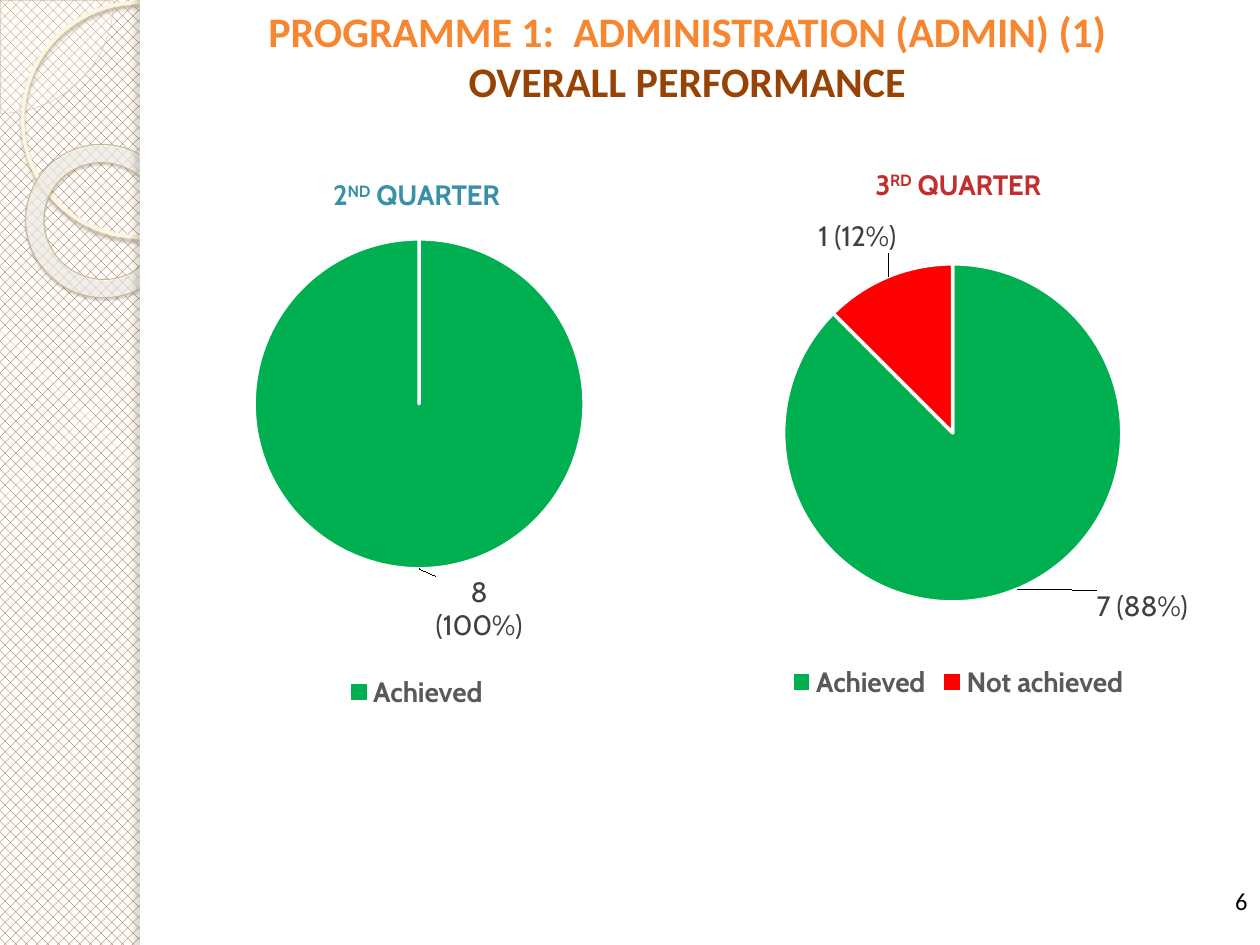
from pptx import Presentation
from pptx.chart.data import CategoryChartData
from pptx.dml.color import RGBColor
from pptx.enum.chart import XL_CHART_TYPE as ChartType, XL_LABEL_POSITION as LabelPosition
from pptx.enum.chart import XL_LEGEND_POSITION as LegendPosition
from pptx.enum.dml import MSO_PATTERN as Pattern
from pptx.enum.shapes import MSO_SHAPE as Shape
from pptx.enum.text import MSO_ANCHOR as Anchor, PP_ALIGN as Align
from pptx.oxml import parse_xml
from pptx.oxml.ns import nsdecls, qn
from pptx.util import Inches, Pt

GREEN, RED = "00B050", "FF0000"
RING_STOPS = [(0, "FFFCF6", 70), (70, "FFFEFB", 55), (100, "F0D28E", 60)]


def color(value):
    return RGBColor.from_string(value)


def style_font(font, size, value, bold=False, name="Cabin"):
    font.size = Pt(size)
    font.name = name
    font.bold = bold
    font.color.rgb = color(value)


def alpha_color(value, alpha):
    return f'<a:srgbClr val="{value}"><a:alpha val="{alpha * 1000}"/></a:srgbClr>'


def add_shape(slide, kind, place, fill=None, line=None, adjustments=()):
    shape = slide.shapes.add_shape(kind, *map(Inches, place))
    shape.shadow.inherit = False
    for index, value in enumerate(adjustments):
        shape.adjustments[index] = value
    if fill:
        shape.fill.solid()
        shape.fill.fore_color.rgb = color(fill)
    else:
        shape.fill.background()
    if line:
        shape.line.color.rgb = color(line[0])
        shape.line.width = Pt(line[1])
    else:
        shape.line.fill.background()
    return shape


def set_opacity(shape, alpha):
    fill = shape._element.spPr.find(qn("a:solidFill"))
    fill[0].append(parse_xml(f'<a:alpha {nsdecls("a")} val="{alpha * 1000}"/>'))


def add_shadow(shape, value, alpha, blur, distance, angle):
    effects = shape._element.spPr.find(qn("a:effectLst"))
    effects.append(parse_xml(
        f'<a:outerShdw {nsdecls("a")} blurRad="{Pt(blur)}" dist="{Pt(distance)}" '
        f'dir="{angle * 60000}" algn="tl" rotWithShape="0">'
        f'{alpha_color(value, alpha)}</a:outerShdw>'))


def set_radial_gradient(shape, stops):
    stop_xml = "".join(f'<a:gs pos="{position * 1000}">{alpha_color(value, alpha)}</a:gs>'
                       for position, value, alpha in stops)
    properties = shape._element.spPr
    properties.replace(properties.find(qn("a:noFill")), parse_xml(
        f'<a:gradFill {nsdecls("a")} rotWithShape="1"><a:gsLst>{stop_xml}</a:gsLst>'
        '<a:path path="circle"><a:fillToRect l="-408000" t="-50000" r="508000" b="150000"/>'
        '</a:path></a:gradFill>'))


def add_text(slide, place, lines, size, align, bold=False, anchor=Anchor.TOP):
    box = slide.shapes.add_textbox(*map(Inches, place))
    box.text_frame.word_wrap = True
    box.text_frame.vertical_anchor = anchor
    para = box.text_frame.paragraphs[0]
    para.alignment = align
    for index, (text, value) in enumerate(lines):
        if index:
            para.add_line_break()
        span = para.add_run()
        span.text = text
        style_font(span.font, size, value, bold, "Calibri")


def manual_layout(target="", **values):
    inner = f'<c:layoutTarget val="{target}"/>' if target else ""
    modes = '<c:xMode val="edge"/><c:yMode val="edge"/>' if target else ""
    sizes = "".join(f'<c:{key} val="{value}"/>' for key, value in values.items())
    return parse_xml(f'<c:layout {nsdecls("c")}><c:manualLayout>{inner}{modes}{sizes}'
                     '</c:manualLayout></c:layout>')


def place_plot(chart, x, y, w, h):
    area = chart._chartSpace.chart.plotArea
    for layout in area.findall(qn("c:layout")):
        area.remove(layout)
    area.insert(0, manual_layout("inner", x=x, y=y, w=w, h=h))


def add_title(chart, number, ordinal, value):
    para = chart.chart_title.text_frame.paragraphs[0]
    for text in (number, ordinal, " QUARTER"):
        span = para.add_run()
        span.text = text
        style_font(span.font, 16, value, True)
        if text == ordinal:
            span.font._element.set("baseline", "30000")


def label_point(series, index, text, shift):
    label = series.points[index].data_label
    span = label.text_frame.paragraphs[0].add_run()
    span.text = text
    style_font(span.font, 16, "404040")
    label.position = LabelPosition.OUTSIDE_END
    element = series.data_labels._element.findall(qn("c:dLbl"))[index]
    element.insert(1, manual_layout(x=shift[0], y=shift[1]))


def hide_point(chart, series, index):
    hidden = f'<c:idx val="{index}"/><c:delete val="1"/>'
    labels = series.data_labels._element
    labels.insert(index, parse_xml(f'<c:dLbl {nsdecls("c")}>{hidden}</c:dLbl>'))
    chart.legend._element.insert(1, parse_xml(
        f'<c:legendEntry {nsdecls("c")}>{hidden}</c:legendEntry>'))


def add_pie(slide, place, title, values, labels, plot):
    data = CategoryChartData()
    data.categories = ["Achieved", "Not achieved"]
    data.add_series("Series 1", values)
    chart = slide.shapes.add_chart(ChartType.PIE, *map(Inches, place), data).chart
    style_font(chart.font, 10, "000000", name="Calibri")
    chart.has_title = True
    add_title(chart, *title)
    chart.has_legend = True
    chart.legend.position = LegendPosition.BOTTOM
    chart.legend.include_in_layout = False
    style_font(chart.legend.font, 16, "595959", True)
    place_plot(chart, *plot)
    chart.plots[0].vary_by_categories = True
    series = chart.plots[0].series[0]
    series.data_labels.show_value = True
    style_font(series.data_labels.font, 16, "404040", True)
    for index, value in enumerate((GREEN, RED)):
        style = series.points[index].format
        style.fill.solid()
        style.fill.fore_color.rgb = color(value)
        style.line.color.rgb = color("FFFFFF")
        style.line.width = Pt(2)
        if values[index]:
            label_point(series, index, *labels[index])
        else:
            hide_point(chart, series, index)


def add_side_panel(slide):
    fill = slide.background.fill
    fill.patterned()
    fill.pattern = Pattern.from_xml("pct40")
    fill.fore_color.rgb = color("964305")
    fill.back_color.rgb = color("FFFFFF")
    corner = add_shape(slide, Shape.PIE, (-0.89, -0.89, 1.79, 1.79), "FEFAF4",
                       ("D3C39F", 0.25), (0, 54.02))
    set_opacity(corner, 33)
    circle = add_shape(slide, Shape.OVAL, (0.18, 0.02, 1.86, 1.86), None, ("FFF5DE", 2.15))
    add_shadow(circle, "B0A68F", 85, 2, 2, 90)
    ring = add_shape(slide, Shape.DONUT, (0.2, 1.15, 1.23, 1.21), None,
                     ("C7B893", 0.58), (0.12,))
    ring.rotation = 38.6
    set_radial_gradient(ring, RING_STOPS)
    add_shadow(ring, "5A5444", 35, 1, 1.2, 75)
    add_shape(slide, Shape.RECTANGLE, (1.11, 0, 8.89, 7.5), "FFFFFF")
    edge = add_shape(slide, Shape.RECTANGLE, (1.11, 0, 0.08, 7.5), "FFFFFF")
    add_shadow(edge, "736F63", 25, 3, 3, 180)


def main():
    deck = Presentation()
    deck.slide_width, deck.slide_height = Inches(10), Inches(7.5)
    page = deck.slides.add_slide(deck.slide_layouts[6])
    add_side_panel(page)
    add_text(page, (1.14, 0, 8.63, 0.88),
             [("PROGRAMME 1:  ADMINISTRATION (ADMIN) (1)", "F88631"),
              ("OVERALL PERFORMANCE", "964305")], 24, Align.CENTER, True, Anchor.MIDDLE)
    add_text(page, (7.67, 6.98, 2.33, 0.52), [("6", "000000")], 14, Align.RIGHT)
    add_pie(page, (1.14, 1.23, 4.33, 4.44), ("2", "ND", "3891A7"), (8, 0),
            [("8 (100%)", (0.11, 0))], (0.2, 0.15, 0.61, 0.59))
    add_pie(page, (5.44, 1.15, 4.33, 4.44), ("3", "RD", "C32D2E"), (7, 1),
            [("7 (88%)", (0.14, -0.01)), ("1 (12%)", (0.02, -0.03))],
            (0.18, 0.21, 0.62, 0.61))
    deck.save("out.pptx")


if __name__ == "__main__":
    main()
